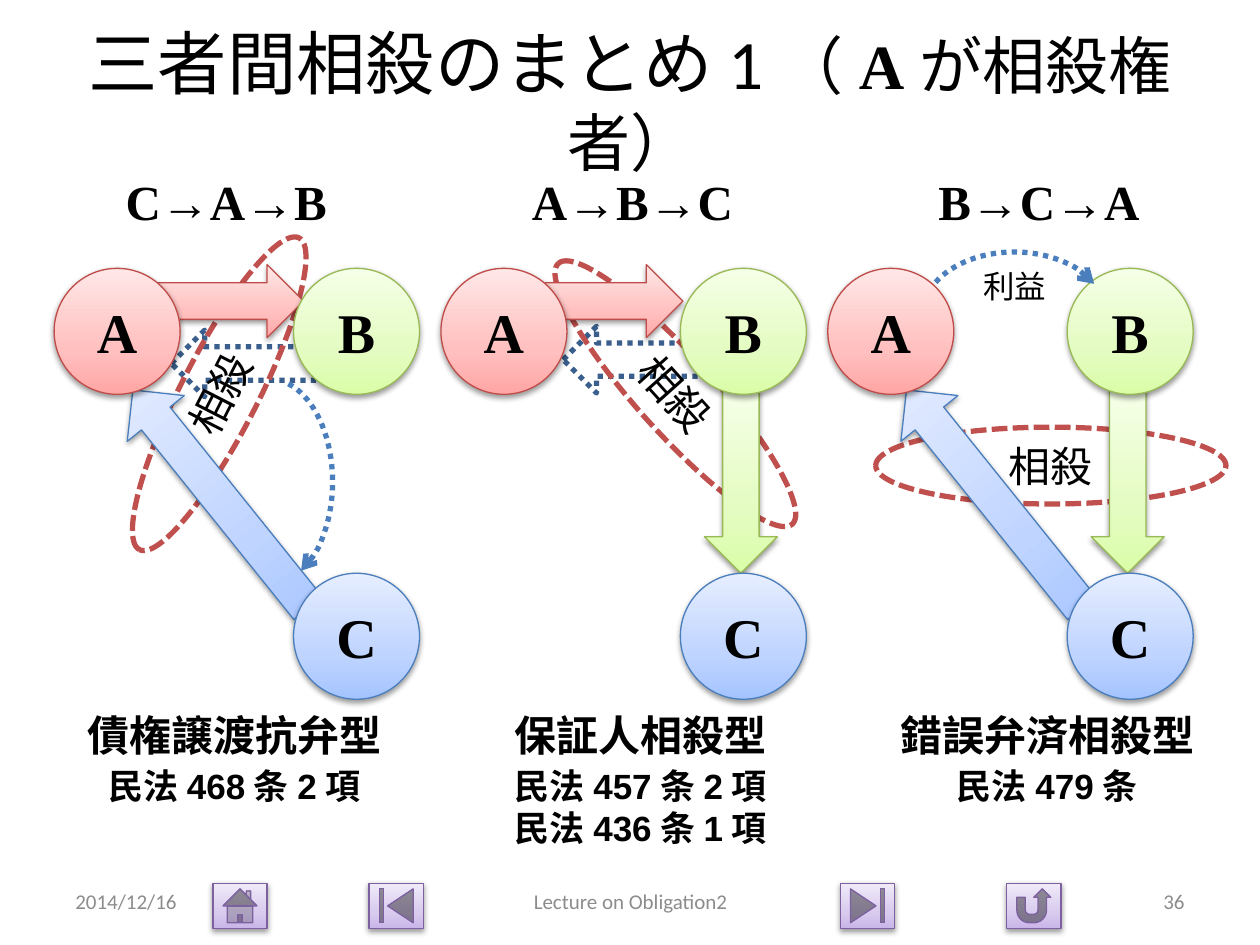
"""Build the slide that sums up three types of three-party set-off."""
import lxml.etree
import pptx
import pptx.dml.color
import pptx.enum.dml
import pptx.enum.shapes
import pptx.enum.text
import pptx.oxml.ns
import pptx.util

SHAPE = pptx.enum.shapes.MSO_SHAPE
DASH = pptx.enum.dml.MSO_LINE
ALIGN = pptx.enum.text.PP_ALIGN
ANCHOR = pptx.enum.text.MSO_ANCHOR
qn = pptx.oxml.ns.qn

COLORS = {
    "text": "000000", "footer": "8C8C8C", "ring": "C0504D",
    "counterclaim": "3A5F8C", "transfer": "4B7EBC",
    "red_line": "BF4C48", "green_line": "98B955",
    "blue_line": "4B7EBC", "purple_line": "7D60A0",
}
GRADIENTS = {
    "red": ("FFA6A5", "FFC0BF", "FFE7E7"),
    "green": ("DAFDA7", "E4FCC2", "F5FFE7"),
    "blue": ("A4C4FF", "BFD4FF", "E6EEFF"),
    "purple": ("C9B5E8", "D8CBEE", "F0EAF9"),
}
JAPANESE = "Noto Sans CJK JP"
SERIF = "Times New Roman"
PANEL_LEFT, PANEL_PITCH = 0.43, 3.07
TEXT_PITCH = 3.225
NODE_TOP, NODE_SIZE = 2.13, 1
NODES = (("A", "red", 0, 0), ("B", "green", 1.9, 0), ("C", "blue", 1.9, 2.42))
PANELS = (
    ("C→A→B", "債権譲渡抗弁型", ("民法468条2項",)),
    ("A→B→C", "保証人相殺型", ("民法457条2項", "民法436条1項")),
    ("B→C→A", "錯誤弁済相殺型", ("民法479条",)),
)


def rgb(name):
    """Return the named colour."""
    return pptx.dml.color.RGBColor.from_string(COLORS[name])


def inches(box):
    """Convert left, top, width and height to lengths."""
    return [pptx.util.Inches(value) for value in box]


def add_run(paragraph, text, size, font, bold=False, color="text"):
    """Append one formatted run."""
    run = paragraph.add_run()
    run.text = text
    run.font.size = pptx.util.Pt(size)
    run.font.name = font
    run.font.bold = bold
    run.font.color.rgb = rgb(color)
    east_asian = lxml.etree.Element(qn("a:ea"), typeface=JAPANESE)
    run.font._element.find(qn("a:latin")).addnext(east_asian)


def write(shape, lines, size, font, bold=False, color="text",
          align=ALIGN.CENTER, anchor=ANCHOR.MIDDLE):
    """Write one paragraph for each line."""
    frame = shape.text_frame
    frame.word_wrap = True
    frame.vertical_anchor = anchor
    for index, line in enumerate(lines):
        paragraph = frame.add_paragraph() if index else frame.paragraphs[0]
        paragraph.alignment = align
        add_run(paragraph, line, size, font, bold, color)


def add_text(slide, box, lines, size, font, **style):
    """Add a text box."""
    write(slide.shapes.add_textbox(*inches(box)), lines, size, font, **style)


def add_solid(slide, kind, box, tone, rotation=0):
    """Add a shape with a vertical gradient and a soft shadow."""
    shape = slide.shapes.add_shape(kind, *inches(box))
    shape.rotation = rotation
    shape.line.color.rgb = rgb(tone + "_line")
    shape.line.width = pptx.util.Pt(0.75)
    shape.fill.gradient()
    shape.fill.gradient_angle = 90
    properties = shape._element.spPr
    stops = properties.find(".//" + qn("a:gsLst"))
    for stop in list(stops):
        stops.remove(stop)
    for position, color in zip((0, 35000, 100000), GRADIENTS[tone]):
        stop = lxml.etree.SubElement(stops, qn("a:gs"), pos=str(position))
        lxml.etree.SubElement(stop, qn("a:srgbClr"), val=color)
    shape.shadow.inherit = False
    shadow = lxml.etree.SubElement(
        properties.find(qn("a:effectLst")), qn("a:outerShdw"),
        blurRad="40000", dist="20000", dir="5400000", rotWithShape="0")
    black = lxml.etree.SubElement(shadow, qn("a:srgbClr"), val="000000")
    lxml.etree.SubElement(black, qn("a:alpha"), val="38000")
    return shape


def add_outline(slide, kind, box, color, dash, rotation=0):
    """Add an unfilled shape with a broken line."""
    shape = slide.shapes.add_shape(kind, *inches(box))
    shape.rotation = rotation
    shape.shadow.inherit = False
    shape.fill.background()
    shape.line.color.rgb = rgb(color)
    shape.line.width = pptx.util.Pt(3)
    shape.line.dash_style = dash
    return shape


def add_ring(slide, left, top, rotation):
    """Add the dashed ring that marks the claims set off."""
    ring = add_outline(slide, SHAPE.OVAL, (left, top, 2.78, 0.61), "ring",
                       DASH.SQUARE_DOT, rotation)
    ring.line._ln.find(qn("a:prstDash")).set("val", "sysDash")
    write(ring, ["相殺"], 24, JAPANESE)


def add_arc(slide, box, start, end):
    """Add a dotted arc that ends in an arrowhead."""
    arc = add_outline(slide, SHAPE.ARC, box, "transfer", DASH.ROUND_DOT)
    arc.adjustments[0], arc.adjustments[1] = start, end
    lxml.etree.SubElement(arc.line._ln, qn("a:tailEnd"), type="arrow")
    return arc


def add_title(slide):
    """Fill and place the title."""
    title = slide.shapes.title
    title.left, title.top, title.width, title.height = inches((0.5, 0.3, 9, 0.98))
    title.text_frame.vertical_anchor = ANCHOR.MIDDLE
    paragraph = title.text_frame.paragraphs[0]
    paragraph.alignment = ALIGN.CENTER
    add_run(paragraph, "三者間相殺のまとめ1", 39.6, "Calibri")
    add_run(paragraph, "（", 36, "Calibri")
    add_run(paragraph, "A", 36, SERIF, bold=True)
    add_run(paragraph, "が相殺権者）", 36, "Calibri")


def add_footer(slide):
    """Add the navigation buttons and the footer texts."""
    buttons = ((SHAPE.ACTION_BUTTON_HOME, 1.69), (SHAPE.ACTION_BUTTON_BEGINNING, 2.93),
               (SHAPE.ACTION_BUTTON_END, 6.67), (SHAPE.ACTION_BUTTON_RETURN, 7.99))
    for kind, left in buttons:
        add_solid(slide, kind, (left, 7.01, 0.43, 0.36), "purple")
    texts = (("2014/12/16", 0.5, 2.33, ALIGN.LEFT),
             ("Lecture on Obligation2", 3.42, 3.17, ALIGN.CENTER),
             ("36", 7.17, 2.33, ALIGN.RIGHT))
    for text, left, width, align in texts:
        add_text(slide, (left, 6.95, width, 0.4), [text], 12, "Calibri",
                 color="footer", align=align)


def add_claims(slide):
    """Add the rings and the arrows of the claims."""
    for left, top in ((4.47, 2.59), (1.36, 2.62)):
        add_outline(slide, SHAPE.LEFT_ARROW, (left, top, 1.74, 0.53),
                    "counterclaim", DASH.ROUND_DOT)
    for left, top, rotation in ((6.95, 3.39, 0), (3.97, 2.82, 48.1), (0.35, 2.82, 297.1)):
        add_ring(slide, left, top, rotation)
    for left, width in ((1.21, 1.2), (4.26, 1.16)):
        add_solid(slide, SHAPE.RIGHT_ARROW, (left, 2.1, width, 0.58), "red")
    for left in (1.46, 7.6):
        add_solid(slide, SHAPE.UP_ARROW, (left, 2.85, 0.58, 2.22), "blue", 321.2)
    for left in (5.59, 8.66):
        add_solid(slide, SHAPE.DOWN_ARROW, (left, 3.09, 0.58, 1.46), "green")


def add_panel(slide, column, route, kind, articles):
    """Add the parties and the captions of one type."""
    for name, tone, right, down in NODES:
        left = PANEL_LEFT + column * PANEL_PITCH + right
        node = add_solid(slide, SHAPE.OVAL,
                         (left, NODE_TOP + down, NODE_SIZE, NODE_SIZE), tone)
        write(node, [name], 32, SERIF, bold=True)
    shift = column * TEXT_PITCH
    add_text(slide, (0.53 + shift, 1.31, 2.53, 0.57), [route], 28, SERIF, bold=True)
    add_text(slide, (0.47 + shift, 5.58, 2.78, 0.5), [kind], 24, "Arial",
             bold=True, anchor=ANCHOR.TOP)
    add_text(slide, (0.47 + shift, 6.02, 2.78, 0.11 + 0.33 * len(articles)), articles,
             20, "Arial", bold=True, anchor=ANCHOR.TOP)


def main():
    """Build and save the presentation."""
    presentation = pptx.Presentation()
    presentation.slide_width, presentation.slide_height = inches((10, 7.5))
    slide = presentation.slides.add_slide(presentation.slide_layouts[5])
    add_title(slide)
    add_footer(slide)
    add_claims(slide)
    for column, panel in enumerate(PANELS):
        add_panel(slide, column, *panel)
    add_arc(slide, (1.64, 3.01, 1, 1.63), 168.53, 42.28)
    benefit = add_arc(slide, (7.32, 2, 1.46, 1), 121.57, 203.22)
    write(benefit, ["利益"], 18, JAPANESE, anchor=ANCHOR.TOP)
    benefit.text_frame.margin_top = pptx.util.Inches(0.12)
    benefit.text_frame.margin_bottom = 0
    presentation.save("out.pptx")


if __name__ == "__main__":
    main()
